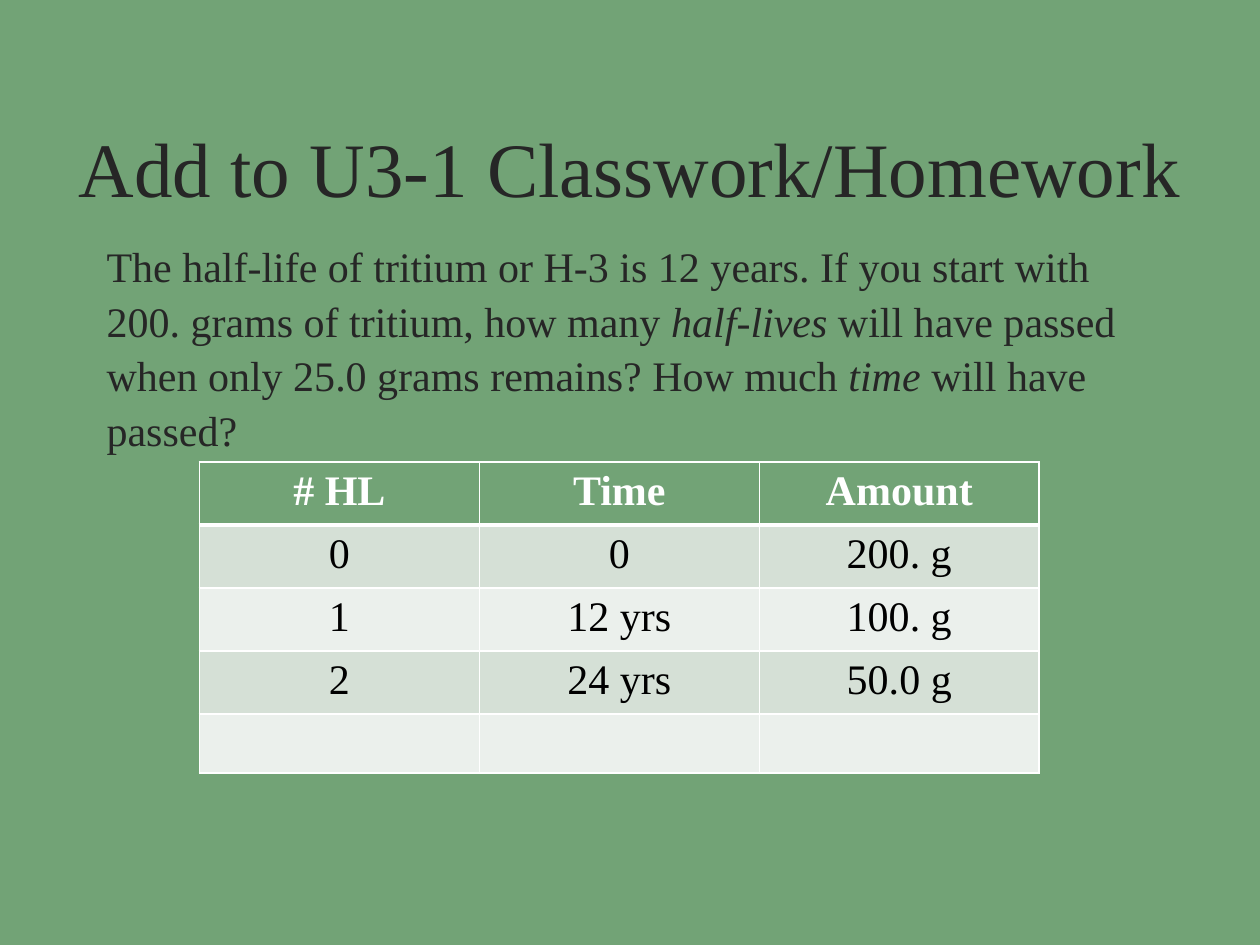
from dataclasses import dataclass

import pptx
import pptx.dml.color
import pptx.enum.text
import pptx.oxml
import pptx.oxml.ns
import pptx.util
from pptx.util import Cm

ALIGN = pptx.enum.text.PP_ALIGN
ANCHOR = pptx.enum.text.MSO_ANCHOR


@dataclass(frozen=True)
class Theme:
    font: str = "Times New Roman"
    title_size: int = 44
    body_size: int = 24
    line_spacing: float = 1.08
    ink: str = "262626"
    green: str = "72A376"
    white: str = "FFFFFF"
    black: str = "000000"
    bands: tuple[str, str] = ("D5E0D6", "EBF0EC")
    thin: int = 1
    thick: int = 3


@dataclass(frozen=True)
class Box:
    left: float
    top: float
    width: float
    height: float

    def lengths(self) -> tuple:
        return Cm(self.left), Cm(self.top), Cm(self.width), Cm(self.height)


@dataclass(frozen=True)
class HalfLife:
    count: str = ""
    time: str = ""
    amount: str = ""

    def values(self) -> tuple[str, str, str]:
        return self.count, self.time, self.amount


THEME = Theme()
TITLE_BOX = Box(1.06, 1.69, 23.28, 3.18)
QUESTION_BOX = Box(1.9, 4.65, 21.59, 11.43)
TABLE_BOX = Box(4.02, 9.31, 16.93, 5.95)

TITLE = "Add to U3-1 Classwork/Homework"
# Every second piece is in italics
QUESTION = (
    "The half-life of tritium or H-3 is 12 years. If you start with 200. grams "
    "of tritium, how many ",
    "half-lives",
    " will have passed when only 25.0 grams remains? How much ",
    "time",
    " will have passed?",
)
HALF_LIVES = (
    HalfLife("# HL", "Time", "Amount"),
    HalfLife("0", "0", "200. g"),
    HalfLife("1", "12 yrs", "100. g"),
    HalfLife("2", "24 yrs", "50.0 g"),
    HalfLife(),
)


def rgb(color: str) -> pptx.dml.color.RGBColor:
    return pptx.dml.color.RGBColor.from_string(color)


def add_text(paragraph, text: str, *, size: int = THEME.body_size,
             color: str = THEME.ink, bold: bool = False,
             italic: bool = False) -> None:
    run = paragraph.add_run()
    run.text = text
    run.font.name = THEME.font
    run.font.size = pptx.util.Pt(size)
    run.font.bold = bold
    run.font.italic = italic
    run.font.color.rgb = rgb(color)


def add_text_box(slide, box: Box, *, align=ALIGN.LEFT, anchor=ANCHOR.TOP):
    """Add a wrapping text box and return its paragraph."""
    frame = slide.shapes.add_textbox(*box.lengths()).text_frame
    frame.word_wrap = True
    frame.vertical_anchor = anchor
    paragraph = frame.paragraphs[0]
    paragraph.alignment = align
    paragraph.line_spacing = THEME.line_spacing
    return paragraph


def set_borders(cell, **widths: int) -> None:
    """Draw white cell borders; the fill must be set afterwards."""
    properties = cell._tc.get_or_add_tcPr()
    for side, width in widths.items():
        properties.append(pptx.oxml.parse_xml(
            f'<a:ln{side} {pptx.oxml.ns.nsdecls("a")} w="{pptx.util.Pt(width)}">'
            f'<a:solidFill><a:srgbClr val="{THEME.white}"/></a:solidFill>'
            f'</a:ln{side}>'))


def add_half_life_table(slide, box: Box, rows: tuple[HalfLife, ...]) -> None:
    columns = len(rows[0].values())
    table = slide.shapes.add_table(len(rows), columns, *box.lengths()).table
    for row_index, half_life in enumerate(rows):
        header = row_index == 0
        fill = THEME.green if header else THEME.bands[(row_index - 1) % 2]
        top = THEME.thick if row_index == 1 else THEME.thin
        bottom = THEME.thick if header else THEME.thin
        for column_index, value in enumerate(half_life.values()):
            cell = table.cell(row_index, column_index)
            set_borders(cell, L=THEME.thin, R=THEME.thin, T=top, B=bottom)
            cell.fill.solid()
            cell.fill.fore_color.rgb = rgb(fill)
            paragraph = cell.text_frame.paragraphs[0]
            paragraph.alignment = ALIGN.CENTER
            if value:
                add_text(paragraph, value, bold=header,
                         color=THEME.white if header else THEME.black)


def main() -> None:
    deck = pptx.Presentation()
    deck.slide_width, deck.slide_height = Cm(25.4), Cm(19.05)
    slide = deck.slides.add_slide(deck.slide_layouts[6])
    slide.background.fill.solid()
    slide.background.fill.fore_color.rgb = rgb(THEME.green)

    # Question
    question = add_text_box(slide, QUESTION_BOX)
    for index, piece in enumerate(QUESTION):
        add_text(question, piece, italic=index % 2 == 1)

    # Half-life table
    add_half_life_table(slide, TABLE_BOX, HALF_LIVES)

    # Title
    title = add_text_box(slide, TITLE_BOX, align=ALIGN.CENTER,
                         anchor=ANCHOR.MIDDLE)
    add_text(title, TITLE, size=THEME.title_size)

    deck.save("out.pptx")


if __name__ == "__main__":
    main()
